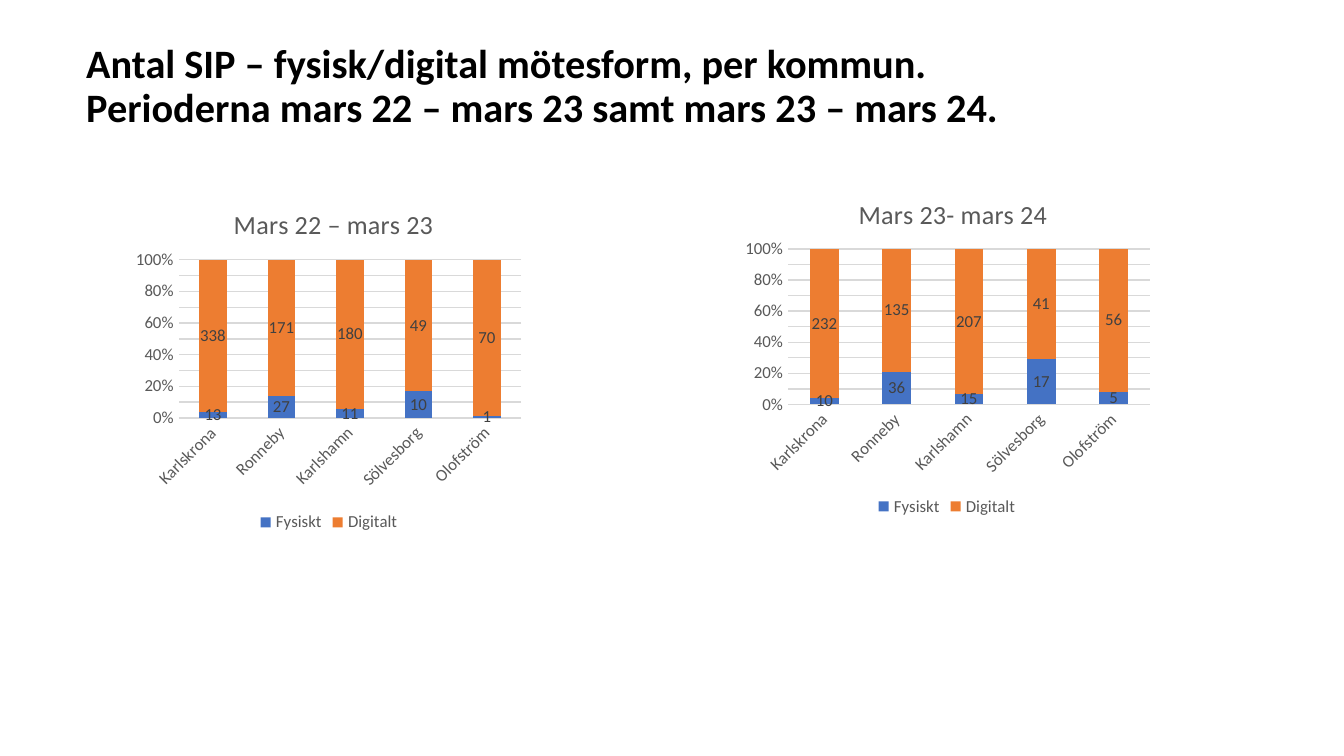
from pptx import Presentation
from pptx.chart.data import CategoryChartData
from pptx.dml.color import RGBColor
from pptx.enum.chart import XL_CHART_TYPE, XL_LABEL_POSITION, XL_LEGEND_POSITION, XL_TICK_MARK
from pptx.enum.text import MSO_ANCHOR, MSO_AUTO_SIZE, PP_ALIGN
from pptx.oxml import parse_xml
from pptx.oxml.ns import nsdecls, qn
from pptx.util import Pt

STACKED = XL_CHART_TYPE.COLUMN_STACKED_100
CENTER = XL_LABEL_POSITION.CENTER
BOTTOM = XL_LEGEND_POSITION.BOTTOM
NO_TICK = XL_TICK_MARK.NONE
MIDDLE = MSO_ANCHOR.MIDDLE
NO_AUTOFIT = MSO_AUTO_SIZE.NONE
LEFT = PP_ALIGN.LEFT

COLORS = {
    "black": "000000",
    "text": "595959",
    "label": "404040",
    "grid": "D9D9D9",
    "Fysiskt": "4472C4",
    "Digitalt": "ED7D31",
}
MUNICIPALITIES = ["Karlskrona", "Ronneby", "Karlshamn", "Sölvesborg", "Olofström"]
PERIODS = [
    {
        "title": "Mars 22 – mars 23",
        "title_left": 0.25,
        "box": (69, 96.5, 214.5, 191.5),
        "series": {"Fysiskt": [13, 27, 11, 10, 1], "Digitalt": [338, 171, 180, 49, 70]},
    },
    {
        "title": "Mars 23- mars 24",
        "title_left": 0.28,
        "box": (394, 91.5, 226.5, 188),
        "series": {"Fysiskt": [10, 36, 15, 17, 5], "Digitalt": [232, 135, 207, 41, 56]},
    },
]


def color(name):
    return RGBColor.from_string(COLORS[name])


def format_font(font, size=9, fill="text", bold=False):
    font.name = "Calibri"
    font.size = Pt(size)
    font.bold = bold
    font.color.rgb = color(fill)


def write_text(text_frame, text, line_spacing=None, align=None, **font_format):
    text_frame.text = text
    paragraph = text_frame.paragraphs[0]
    paragraph.line_spacing = line_spacing
    paragraph.alignment = align
    for run in paragraph.runs:
        format_font(run.font, **font_format)


def set_layout(element, position, target="", **fractions):
    for layout in element.findall(qn("c:layout")):
        element.remove(layout)
    modes = "".join(f'<c:{key}Mode val="edge"/>' for key in ("x", "y"))
    values = "".join(f'<c:{key} val="{value}"/>' for key, value in fractions.items())
    element.insert(position, parse_xml(
        f'<c:layout {nsdecls("c")}><c:manualLayout>{target}{modes}{values}'
        "</c:manualLayout></c:layout>"))


class SlideBuilder:
    def __init__(self, slide):
        self.slide = slide

    def title(self, text, left, top, width, height):
        shape = self.slide.shapes.title
        shape.left, shape.top = Pt(left), Pt(top)
        shape.width, shape.height = Pt(width), Pt(height)
        text_frame = shape.text_frame
        text_frame.word_wrap = True
        text_frame.auto_size = NO_AUTOFIT
        text_frame.vertical_anchor = MIDDLE
        write_text(text_frame, text, line_spacing=0.9, align=LEFT,
                   size=21.6, fill="black", bold=True)

    def chart(self, title, title_left, box, series):
        data = CategoryChartData()
        data.categories = MUNICIPALITIES
        for name, values in series.items():
            data.add_series(name, values)
        chart = self.slide.shapes.add_chart(STACKED, *map(Pt, box), data).chart
        format_font(chart.font, size=10, fill="black")

        chart.has_title = True
        write_text(chart.chart_title.text_frame, title, size=14)
        set_layout(chart.chart_title._element, 1, x=title_left, y=0.06)
        plot_area = chart._chartSpace.xpath(".//c:plotArea")[0]
        set_layout(plot_area, 0, '<c:layoutTarget val="inner"/>',
                   x=0.125, y=0.223, w=0.855, h=0.443)

        chart.has_legend = True
        chart.legend.position = BOTTOM
        chart.legend.include_in_layout = False
        format_font(chart.legend.font)
        self.axes(chart)
        self.columns(chart.plots[0])

    def axes(self, chart):
        category_axis, value_axis = chart.category_axis, chart.value_axis
        for axis in (category_axis, value_axis):
            axis.major_tick_mark = axis.minor_tick_mark = NO_TICK
            format_font(axis.tick_labels.font)
        value_axis.has_major_gridlines = True
        for line in (category_axis.format.line, value_axis.major_gridlines.format.line):
            line.color.rgb = color("grid")
            line.width = Pt(0.75)
        value_axis.format.line.fill.background()
        value_axis.minimum_scale, value_axis.maximum_scale = 0, 1
        value_axis.major_unit = 0.1
        value_axis.tick_labels.number_format = "0%"
        value_axis.tick_labels.number_format_is_linked = False
        category_axis._element.xpath("c:txPr/a:bodyPr")[0].set("rot", "-2700000")

    def columns(self, plot):
        plot.gap_width = 150
        plot.overlap = 100
        plot.vary_by_categories = False
        for series in plot.series:
            series.format.fill.solid()
            series.format.fill.fore_color.rgb = color(series.name)
            labels = series.data_labels
            labels.show_value = True
            labels.position = CENTER
            format_font(labels.font, fill="label")


def main():
    presentation = Presentation()
    presentation.slide_width, presentation.slide_height = Pt(720), Pt(405)
    builder = SlideBuilder(presentation.slides.add_slide(presentation.slide_layouts[5]))
    builder.title(
        "Antal SIP – fysisk/digital mötesform, per kommun. \v"
        "Perioderna mars 22 – mars 23 samt mars 23 – mars 24.",
        39, 26.5, 571.5, 40.5)
    for period in PERIODS:
        builder.chart(**period)
    presentation.save("out.pptx")


if __name__ == "__main__":
    main()
